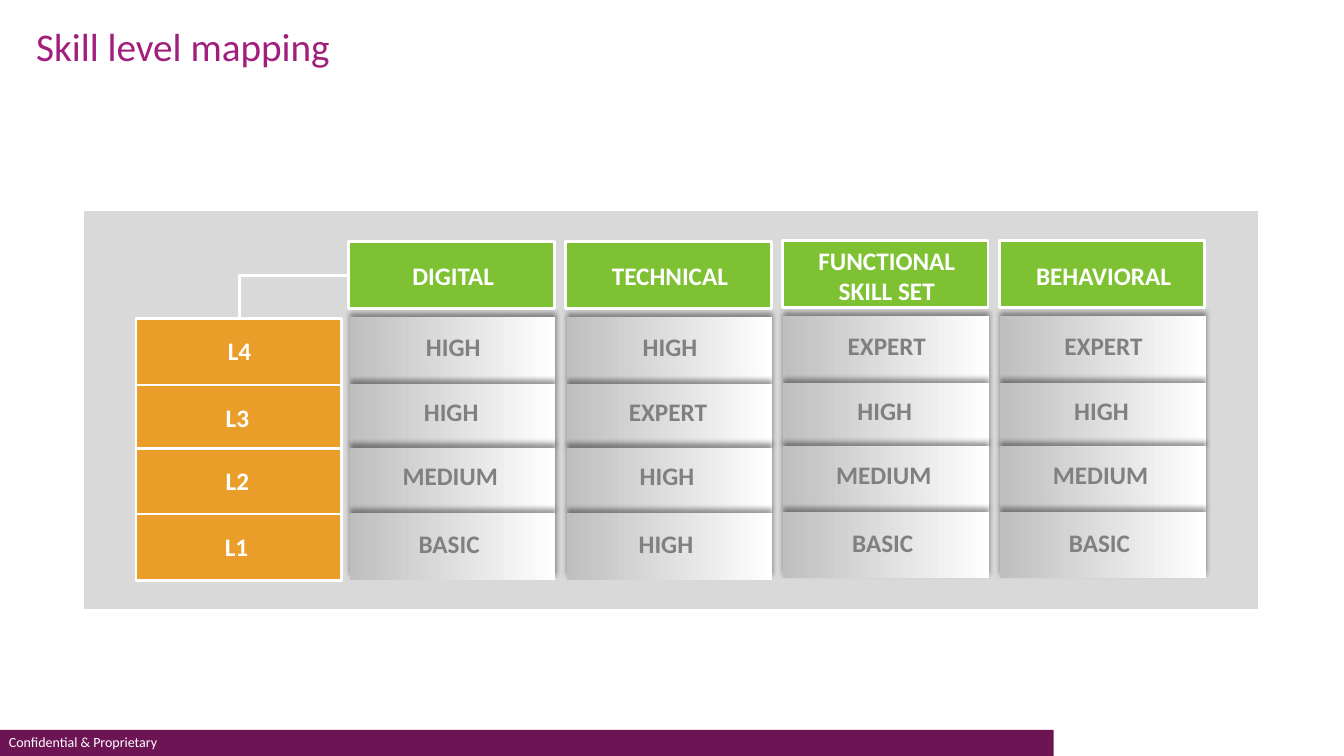
import pptx
import pptx.util
import pptx.dml.color
import pptx.enum.shapes
import pptx.enum.text
import pptx.oxml.ns
from lxml import etree

# Content
TITLE = "Skill level mapping"
FOOTER = "Confidential & Proprietary"
LEVELS = ["L4", "L3", "L2", "L1"]
SKILLS = {
    "DIGITAL": ["HIGH", "HIGH", "MEDIUM", "BASIC"],
    "TECHNICAL": ["HIGH", "EXPERT", "HIGH", "HIGH"],
    "FUNCTIONAL\nSKILL SET": ["EXPERT", "HIGH", "MEDIUM", "BASIC"],
    "BEHAVIORAL": ["EXPERT", "HIGH", "MEDIUM", "BASIC"],
}

# Format
COLORS = {"title": "A21E7C", "footer": "6D1554", "panel": "D9D9D9", "skill": "7EC234",
          "level": "EA9D29", "shade": "BFBFBF", "rating": "808080", "white": "FFFFFF",
          "black": "000000"}
LABEL = {"size": pptx.util.Pt(18), "bold": True}
HEADING = {"size": pptx.util.Pt(28)}
SMALL = {"size": pptx.util.Pt(10)}

# Layout in px, 100 to the inch
PX = 9144
BOX_W, BOX_H = 204, 66
LABEL_W, LINE_H, INSET = 189, 30, 10
COL_X, COL_STEP, HEAD_Y = 346, 215, 240
LEVEL_X = 135
ROW_Y = [315, 381, 444, 509]
RATING_SHIFT = [(8, 9), (6, 7), (5, 8), (4, 10)]
LEVEL_SHIFT = [8, 6, 6, 5]

prs = pptx.Presentation()
prs.slide_width, prs.slide_height = 1333 * PX, 750 * PX
s = prs.slides.add_slide(prs.slide_layouts[6])


def rgb(name):
    return pptx.dml.color.RGBColor.from_string(COLORS[name])


def add_box(x, y, w, h, color=None, outlined=True):
    sp = s.shapes.add_shape(pptx.enum.shapes.MSO_SHAPE.RECTANGLE, x * PX, y * PX, w * PX, h * PX)
    sp.shadow.inherit = False
    if color:
        sp.fill.solid()
        sp.fill.fore_color.rgb = rgb(color)
    if outlined:
        sp.line.color.rgb = rgb("white")
        sp.line.width = pptx.util.Pt(2)
    else:
        sp.line.fill.background()
    return sp


def add_rating_box(x, y):
    sp = add_box(x, y, BOX_W, BOX_H, outlined=False)
    sp.fill.gradient()
    sp.fill.gradient_angle = 180
    for stop, name, position in zip(sp.fill.gradient_stops, ("white", "shade"), (0, 1)):
        stop.color.rgb = rgb(name)
        stop.position = position
    # Soft shadow above the box
    qn = pptx.oxml.ns.qn
    effects = sp._element.spPr.find(qn("a:effectLst"))
    shadow = etree.SubElement(effects, qn("a:outerShdw"), blurRad=str(4 * 12700),
                              dist=str(3 * 12700), dir="16200000", algn="b", rotWithShape="0")
    tone = etree.SubElement(shadow, qn("a:srgbClr"), val=COLORS["black"])
    etree.SubElement(tone, qn("a:alpha"), val="40000")


def add_text(text, x, y, w, h, color, style, centered=True):
    tf = s.shapes.add_textbox(x * PX, y * PX, w * PX, h * PX).text_frame
    tf.word_wrap = True
    tf.auto_size = pptx.enum.text.MSO_AUTO_SIZE.SHAPE_TO_FIT_TEXT
    p = tf.paragraphs[0]
    p.text = text
    if centered:
        p.alignment = pptx.enum.text.PP_ALIGN.CENTER
    for r in p.runs:
        r.font.color.rgb = rgb(color)
        for key, value in {"name": "Calibri", **style}.items():
            setattr(r.font, key, value)


def add_label(text, x, y, color):
    extra = text.count("\n") * LINE_H
    add_text(text, x, y - extra // 2, LABEL_W, LINE_H + INSET + extra, color, LABEL)


# Footer band
add_box(0, 724, 1045, 26, "footer", outlined=False)
add_text(FOOTER, -1, 723, 334, 27, "white", SMALL, centered=False)

# Panel and the elbow from the levels to the skills
add_box(82, 208, 1167, 398, "panel")
elbow = s.shapes.add_connector(pptx.enum.shapes.MSO_CONNECTOR.ELBOW,
                               318 * PX, 354 * PX, 275 * PX, 236 * PX)
elbow.line.color.rgb = rgb("white")
elbow.line.width = pptx.util.Pt(2.25)
spPr = elbow._element.spPr
spPr.find(pptx.oxml.ns.qn("a:xfrm")).set("rot", "5400000")
spPr.find(pptx.oxml.ns.qn("a:prstGeom")).set("prst", "bentConnector2")
etree.SubElement(spPr, pptx.oxml.ns.qn("a:effectLst"))

# Ratings, one column per skill
for col, ratings in enumerate(SKILLS.values()):
    x = COL_X + 1 + col * COL_STEP
    for rating, row_y, (dx, dy) in zip(ratings, ROW_Y, RATING_SHIFT):
        y = row_y - col // 2
        add_rating_box(x, y)
        add_label(rating, x + dx, y + dy, "rating")

# Skill headings
for col, skill in enumerate(SKILLS):
    x = COL_X + col * COL_STEP
    add_box(x, HEAD_Y - col // 2, BOX_W, BOX_H, "skill")
    add_label(skill, x + 9, HEAD_Y + 13, "white")

# Level headings
for level, y, dx in zip(LEVELS, ROW_Y, LEVEL_SHIFT):
    add_box(LEVEL_X, y + 1, BOX_W, BOX_H, "level")
    add_label(level, LEVEL_X + dx, y + 13, "white")

# Title
add_text(TITLE, 26, 17, 914, 57, "title", HEADING, centered=False)

prs.save("out.pptx")
